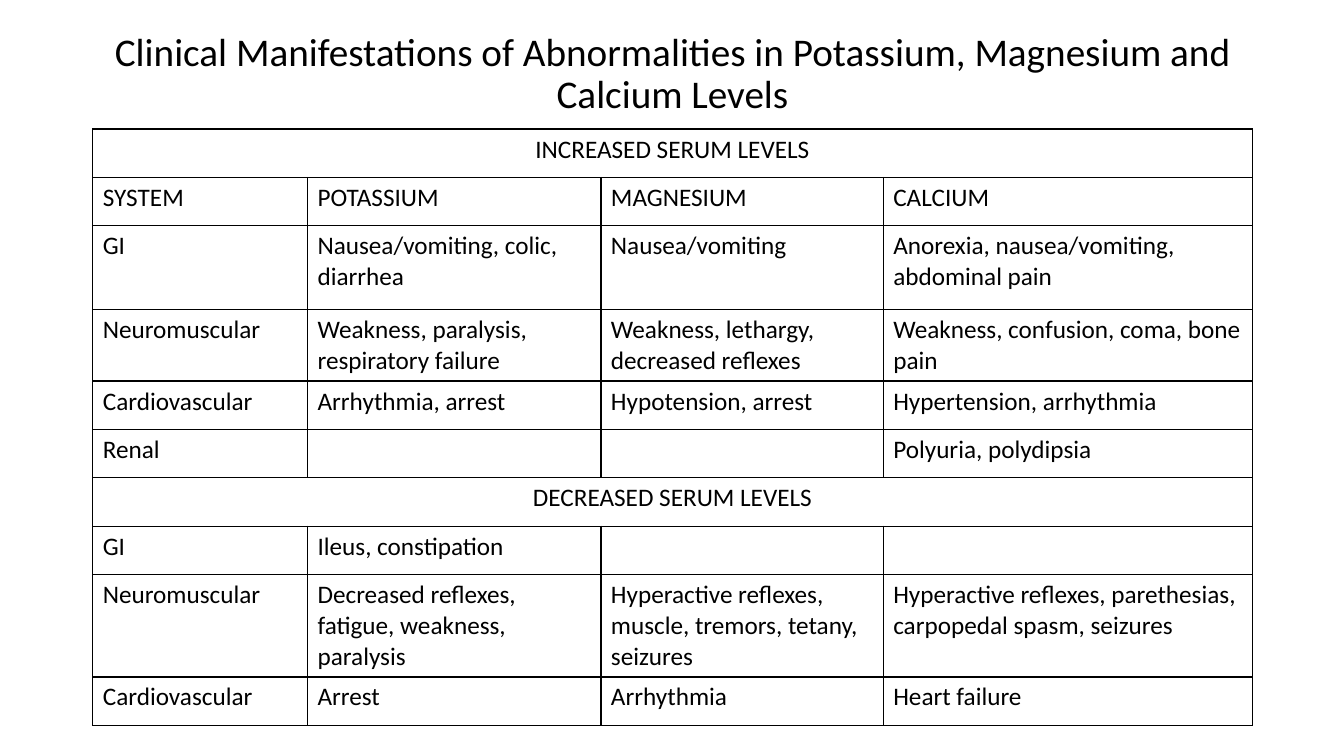
"""Build a slide with a table of clinical signs of abnormal electrolyte levels."""
from pptx import Presentation
from pptx.dml.color import RGBColor
from pptx.enum.text import MSO_ANCHOR, MSO_AUTO_SIZE, PP_ALIGN
from pptx.oxml import parse_xml
from pptx.oxml.ns import nsdecls
from pptx.util import Inches, Pt

BLACK, WHITE = "000000", "FFFFFF"
COLUMN_WIDTHS = [2.13, 2.91, 2.8, 3.66]
ROW_HEIGHT, TALL_ROW_HEIGHT = 0.48, 0.83
ROWS = [
    ["INCREASED SERUM LEVELS"],
    ["SYSTEM", "POTASSIUM", "MAGNESIUM", "CALCIUM"],
    ["GI", "Nausea/vomiting, colic, diarrhea", "Nausea/vomiting",
     "Anorexia, nausea/vomiting, abdominal pain"],
    ["Neuromuscular", "Weakness, paralysis, respiratory failure",
     "Weakness, lethargy, decreased reflexes", "Weakness, confusion, coma, bone pain"],
    ["Cardiovascular", "Arrhythmia, arrest", "Hypotension, arrest",
     "Hypertension, arrhythmia"],
    ["Renal", "", "", "Polyuria, polydipsia"],
    ["DECREASED SERUM LEVELS"],
    ["GI", "Ileus, constipation", "", ""],
    ["Neuromuscular", "Decreased reflexes, fatigue, weakness, paralysis",
     "Hyperactive reflexes, muscle, tremors, tetany, seizures",
     "Hyperactive reflexes, parethesias, carpopedal spasm, seizures"],
    ["Cardiovascular", "Arrest", "Arrhythmia", "Heart failure"],
]


def color(value):
    return RGBColor.from_string(value)


def format_paragraph(paragraph, size, alignment):
    paragraph.alignment = alignment
    paragraph.font.name = "Calibri"
    paragraph.font.size = Pt(size)
    paragraph.font.bold = False
    paragraph.font.color.rgb = color(BLACK)


presentation = Presentation()
presentation.slide_width = Inches(13.33)
presentation.slide_height = Inches(7.5)
slide = presentation.slides.add_slide(presentation.slide_layouts[5])
slide.background.fill.solid()
slide.background.fill.fore_color.rgb = color(WHITE)

title = slide.shapes.title
title.left, title.top = Inches(0.92), Inches(0.21)
title.width, title.height = Inches(11.5), Inches(1.07)
title.text = "Clinical Manifestations of Abnormalities in Potassium, Magnesium and Calcium Levels"
title.text_frame.auto_size = MSO_AUTO_SIZE.NONE
title.text_frame.vertical_anchor = MSO_ANCHOR.MIDDLE
title_paragraph = title.text_frame.paragraphs[0]
title_paragraph.line_spacing = 0.9
format_paragraph(title_paragraph, 28, PP_ALIGN.CENTER)

table = slide.shapes.add_table(
    len(ROWS), len(COLUMN_WIDTHS), Inches(0.92), Inches(1.28),
    Inches(sum(COLUMN_WIDTHS)), Inches(ROW_HEIGHT * len(ROWS))).table
table.first_row = False
table.horz_banding = False
for column, width in zip(table.columns, COLUMN_WIDTHS):
    column.width = Inches(width)
for row in table.rows:
    row.height = Inches(ROW_HEIGHT)
table.rows[2].height = Inches(TALL_ROW_HEIGHT)

for row_index, texts in enumerate(ROWS):
    is_heading = len(texts) == 1
    if is_heading:
        table.cell(row_index, 0).merge(table.cell(row_index, len(COLUMN_WIDTHS) - 1))
    for column_index in range(len(COLUMN_WIDTHS)):
        cell = table.cell(row_index, column_index)
        for side in ("lnL", "lnR", "lnT", "lnB"):
            cell._tc.get_or_add_tcPr().append(parse_xml(
                f'<a:{side} {nsdecls("a")} w="{Pt(1)}"><a:solidFill>'
                f'<a:srgbClr val="{BLACK}"/></a:solidFill></a:{side}>'))
        cell.fill.background()
        if column_index < len(texts):
            cell.text = texts[column_index]
        format_paragraph(cell.text_frame.paragraphs[0], 18,
                         PP_ALIGN.CENTER if is_heading else PP_ALIGN.LEFT)

presentation.save("out.pptx")
